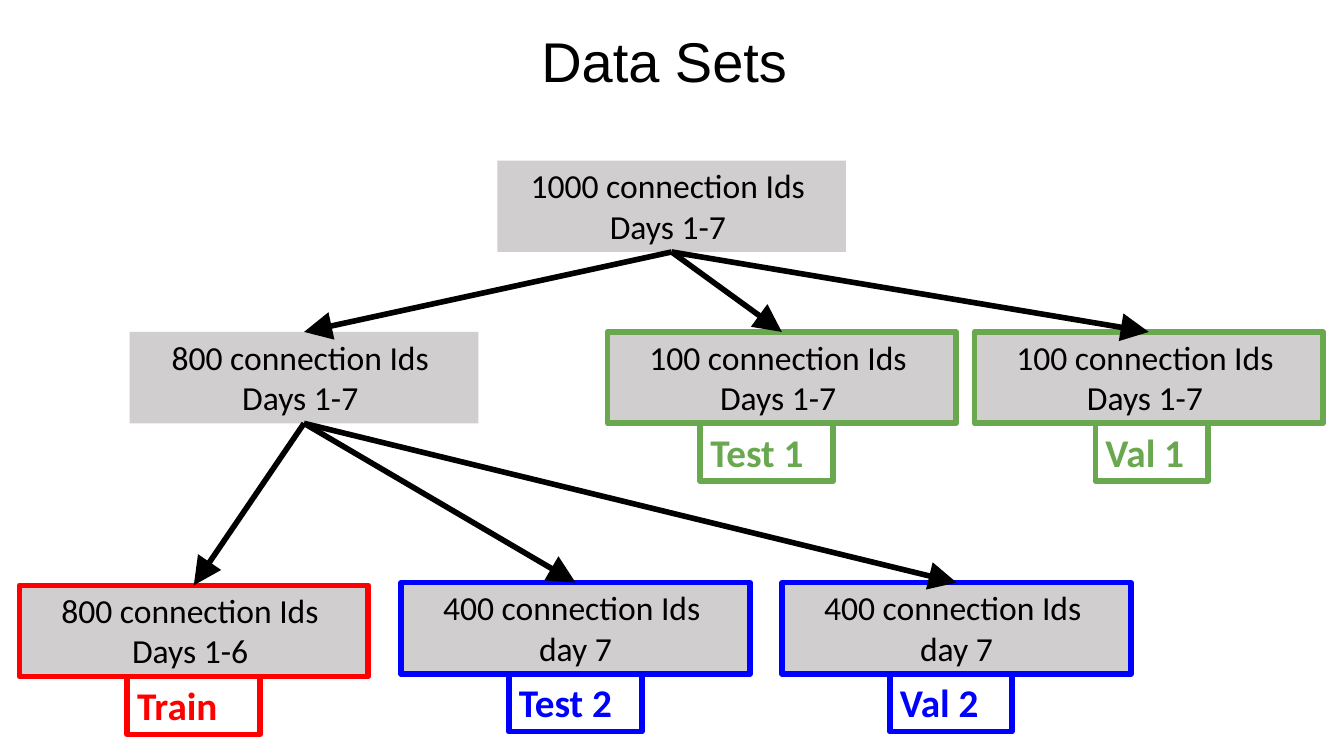
from lxml.etree import SubElement
from pptx import Presentation
from pptx.dml.color import RGBColor
from pptx.enum.shapes import MSO_CONNECTOR as Connector, MSO_SHAPE as Shape
from pptx.enum.text import MSO_ANCHOR as Anchor, PP_ALIGN as Align
from pptx.oxml.ns import qn
from pptx.util import Pt

PX = 4572
NODE_WIDTH, NODE_HEIGHT, LABEL_HEIGHT = 519, 136, 86
TOP_SITE, BOTTOM_SITE = 0, 2
BLACK, GRAY = "000000", "D0CECE"
GREEN, RED, BLUE = "6AA84F", "FF0000", "0000FF"


def px(*lengths):
    return [length * PX for length in lengths]


def color(hex_string):
    return RGBColor.from_string(hex_string)


def set_text(shape, text, font_name, size, font_color, align, anchor=Anchor.TOP, bold=False):
    frame = shape.text_frame
    frame.word_wrap = True
    frame.vertical_anchor = anchor
    frame.margin_left = frame.margin_right = 15 * PX
    frame.margin_top = frame.margin_bottom = 7 * PX
    frame.text = text
    for paragraph in frame.paragraphs:
        paragraph.alignment = align
        for run in paragraph.runs:
            run.font.name = font_name
            run.font.size = Pt(size)
            run.font.bold = bold
            run.font.color.rgb = color(font_color)


def add_box(slide, box, fill=None, outline=None):
    shape = slide.shapes.add_shape(Shape.RECTANGLE, *px(*box))
    shape.shadow.inherit = False
    if fill:
        shape.fill.solid()
        shape.fill.fore_color.rgb = color(fill)
    else:
        shape.fill.background()
    if outline:
        shape.line.color.rgb = color(outline)
        shape.line.width = Pt(3)
    else:
        shape.line.fill.background()
    return shape


def add_title(slide, box, text):
    title = slide.shapes.add_textbox(*px(*box))
    set_text(title, text, "Arial", 30, BLACK, Align.CENTER, Anchor.MIDDLE)


def add_node(slide, left, top, text, outline=None):
    node = add_box(slide, (left, top, NODE_WIDTH, NODE_HEIGHT), GRAY, outline)
    set_text(node, text, "Calibri", 18, BLACK, Align.CENTER)
    return node


def add_label(slide, node_left, node_top, offset, width, text, label_color):
    box = (node_left + offset, node_top + NODE_HEIGHT, width, LABEL_HEIGHT)
    label = add_box(slide, box, outline=label_color)
    set_text(label, text, "Calibri", 21, label_color, Align.LEFT, bold=True)


def add_arrow(slide, parent, child):
    arrow = slide.shapes.add_connector(Connector.STRAIGHT, 0, 0, 0, 0)
    arrow.begin_connect(parent, BOTTOM_SITE)
    arrow.end_connect(child, TOP_SITE)
    arrow.line.color.rgb = color(BLACK)
    arrow.line.width = Pt(3)
    line = arrow.line._get_or_add_ln()
    SubElement(line, qn("a:tailEnd"), type="triangle", w="lg", len="lg")
    SubElement(arrow._element.spPr, qn("a:effectLst"))


def add_split(slide, parent, leaves):
    for left, top, text, outline, offset, width, label in leaves:
        node = add_node(slide, left, top, text, outline)
        add_arrow(slide, parent, node)
        add_label(slide, left, top, offset, width, label, outline)


def build_slide(slide):
    add_title(slide, (138, 12, 1724, 156), "Data Sets ")
    root = add_node(slide, 740, 239, "1000 connection Ids \nDays 1-7 ")
    main_set = add_node(slide, 193, 494, "800 connection Ids \nDays 1-7 ")
    add_arrow(slide, root, main_set)
    held_out = "100 connection Ids \nDays 1-7 "
    last_day = "400 connection Ids \nday 7"
    add_split(slide, root, [
        (904, 494, held_out, GREEN, 138, 198, "Test 1"),
        (1450, 494, held_out, GREEN, 180, 168, "Val 1"),
    ])
    add_split(slide, main_set, [
        (29, 871, "800 connection Ids \nDays 1-6 ", RED, 160, 198, "Train"),
        (597, 867, last_day, BLUE, 160, 198, "Test 2"),
        (1164, 867, last_day, BLUE, 160, 182, "Val 2"),
    ])


def main():
    presentation = Presentation()
    presentation.slide_width, presentation.slide_height = px(2000, 1125)
    build_slide(presentation.slides.add_slide(presentation.slide_layouts[6]))
    presentation.save("out.pptx")


if __name__ == "__main__":
    main()
